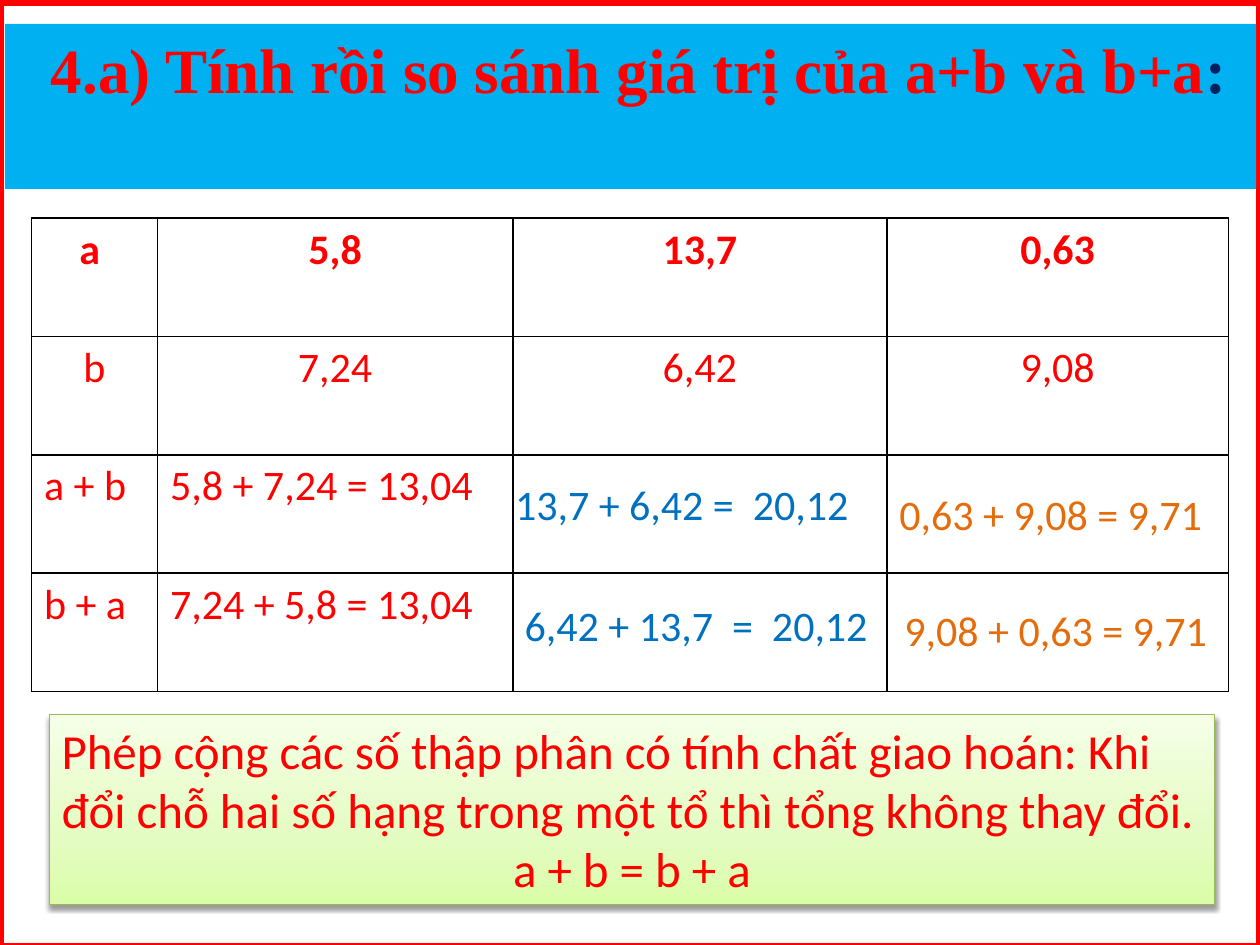
import copy

import lxml.etree
import pptx
import pptx.dml.color
import pptx.enum.shapes
import pptx.enum.text
import pptx.oxml
import pptx.oxml.ns
import pptx.util

Inches = pptx.util.Inches
Pt = pptx.util.Pt
qn = pptx.oxml.ns.qn
CENTER = pptx.enum.text.PP_ALIGN.CENTER

RED, BLUE, ORANGE, BLACK = "FF0000", "0070C0", "E46C0A", "000000"
COLUMN_WIDTHS = [1, 2.82, 2.97, 2.71]
ROW_HEIGHT = 0.94
ROWS = [
    ["a ", "5,8", "13,7", "0,63"],
    ["b", "7,24", "6,42", "9,08"],
    ["a + b", "5,8 + 7,24 = 13,04", "", ""],
    ["b + a", "7,24 + 5,8 = 13,04", "", ""],
]
ANSWERS = [
    (3.99, 3.75, 3, [("13,7 + 6,42 =  20,12", 24, BLUE)]),
    (7.04, 3.83, 2.75, [("0,63 + 9,08 = 9,71", 24, ORANGE)]),
    (4.01, 4.71, 3, [(" ", 18, BLACK), ("6,42 + 13,7  =  20,12", 24, BLUE)]),
    (7.08, 4.75, 2.75, [("9,08 + 0,63 = 9,71", 24, ORANGE)]),
]
RULE = ("Phép cộng các số thập phân có tính chất giao hoán: Khi đổi chỗ hai số hạng "
        "trong một tổ thì tổng không thay đổi.")


def rgb(color):
    """Turn a hex string into a colour."""
    return pptx.dml.color.RGBColor.from_string(color)


def style_run(run, size, color, bold=False, font="Calibri"):
    """Format one run of text."""
    run.font.name = font
    run.font.size = Pt(size)
    run.font.bold = bold
    run.font.color.rgb = rgb(color)


def add_run(paragraph, text, *style):
    """Append a formatted run to a paragraph."""
    run = paragraph.add_run()
    run.text = text
    style_run(run, *style)


def add_rectangle(slide, left, top, width, height, fill=None, line=None, weight=0):
    """Add a shadowless rectangle with an optional fill and outline."""
    rectangle = slide.shapes.add_shape(
        pptx.enum.shapes.MSO_SHAPE.RECTANGLE,
        Inches(left), Inches(top), Inches(width), Inches(height))
    rectangle.shadow.inherit = False
    if fill:
        rectangle.fill.solid()
        rectangle.fill.fore_color.rgb = rgb(fill)
    else:
        rectangle.fill.background()
    if line:
        rectangle.line.color.rgb = rgb(line)
        rectangle.line.width = Pt(weight)
    else:
        rectangle.line.fill.background()
    rectangle.text_frame.vertical_anchor = pptx.enum.text.MSO_ANCHOR.TOP
    return rectangle


def add_title(slide):
    """Add the blue band with the exercise title."""
    band = add_rectangle(slide, 0.04, 0.19, 9.93, 1.31, fill="00B0F0")
    band.text_frame.word_wrap = False
    title = band.text_frame.paragraphs[0]
    title.alignment = CENTER
    serif = "Times New Roman"
    add_run(title, " ", 36, "7030A0", False, serif)
    add_run(title, "4.a) Tính rồi so sánh giá trị của a+b và b+a", 36, RED, True, serif)
    add_run(title, ":", 36, "002060", True, serif)


def set_borders(cell, color, weight):
    """Draw all four borders of a table cell."""
    properties = cell._tc.get_or_add_tcPr()
    for index, side in enumerate(["a:lnL", "a:lnR", "a:lnT", "a:lnB"]):
        border = lxml.etree.Element(qn(side), w=str(Pt(weight)))
        fill = lxml.etree.SubElement(border, qn("a:solidFill"))
        lxml.etree.SubElement(fill, qn("a:srgbClr"), val=color)
        properties.insert(index, border)


def add_value_table(slide):
    """Add the table of values for a, b and their sums."""
    table = slide.shapes.add_table(
        len(ROWS), len(COLUMN_WIDTHS), Inches(0.25), Inches(1.73),
        Inches(sum(COLUMN_WIDTHS)), Inches(ROW_HEIGHT * len(ROWS))).table
    table.first_row = table.horz_banding = False
    for column, width in zip(table.columns, COLUMN_WIDTHS):
        column.width = Inches(width)
    for row_index, values in enumerate(ROWS):
        table.rows[row_index].height = Inches(ROW_HEIGHT)
        for column_index, value in enumerate(values):
            cell = table.cell(row_index, column_index)
            cell.fill.background()
            set_borders(cell, BLACK, 1)
            paragraph = cell.text_frame.paragraphs[0]
            if row_index < 2:
                paragraph.alignment = CENTER
            if value:
                add_run(paragraph, value, 24, RED, row_index == 0)


def set_gradient(shape, stops, angle):
    """Fill a shape with a linear gradient of (position, colour) stops."""
    shape.fill.gradient()
    shape.fill.gradient_angle = angle
    stop_list = shape.fill._fill._gradFill.find(qn("a:gsLst"))
    while len(stop_list) < len(stops):
        stop_list.append(copy.deepcopy(stop_list[-1]))
    for stop, (position, color) in zip(shape.fill.gradient_stops, stops):
        stop.position = position
        stop.color.rgb = rgb(color)


def set_shadow(shape, color, opacity, blur, distance):
    """Give a shape a soft shadow that falls straight down."""
    effects = shape._element.spPr.find(qn("a:effectLst"))
    shadow = lxml.etree.SubElement(
        effects, qn("a:outerShdw"), blurRad=str(Pt(blur)), dist=str(Pt(distance)),
        dir="5400000", rotWithShape="0")
    shade = lxml.etree.SubElement(shadow, qn("a:srgbClr"), val=color)
    lxml.etree.SubElement(shade, qn("a:alpha"), val=str(opacity * 1000))


def add_rule(slide):
    """Add the green box that states the commutative property."""
    box = add_rectangle(slide, 0.39, 5.67, 9.25, 1.51, line="98B955", weight=0.75)
    set_gradient(box, [(0, "DAFDA7"), (0.35, "E4FCC2"), (1, "F5FFE7")], 90)
    set_shadow(box, BLACK, 38, 3.1, 1.6)
    frame = box.text_frame
    frame.word_wrap = True
    frame.auto_size = pptx.enum.text.MSO_AUTO_SIZE.SHAPE_TO_FIT_TEXT
    statement, formula = frame.paragraphs[0], frame.add_paragraph()
    statement.alignment = pptx.enum.text.PP_ALIGN.LEFT
    formula.alignment = CENTER
    add_run(statement, RULE, 28, RED)
    add_run(formula, "a + b = b + a", 28, RED)


def add_answer(slide, left, top, width, parts):
    """Add one worked sum over its table cell."""
    frame = slide.shapes.add_textbox(
        Inches(left), Inches(top), Inches(width), Inches(0.5)).text_frame
    frame.word_wrap = True
    frame.auto_size = pptx.enum.text.MSO_AUTO_SIZE.SHAPE_TO_FIT_TEXT
    for text, size, color in parts:
        add_run(frame.paragraphs[0], text, size, color)


def main():
    """Build the slide and save it."""
    deck = pptx.Presentation()
    deck.slide_width, deck.slide_height = Inches(10), Inches(7.5)
    slide = deck.slides.add_slide(deck.slide_layouts[6])
    add_rectangle(slide, 0, 0.02, 10, 7.5, line=RED, weight=4.5)
    add_title(slide)
    add_value_table(slide)
    add_rule(slide)
    for answer in ANSWERS:
        add_answer(slide, *answer)
    deck.save("out.pptx")


if __name__ == "__main__":
    main()
